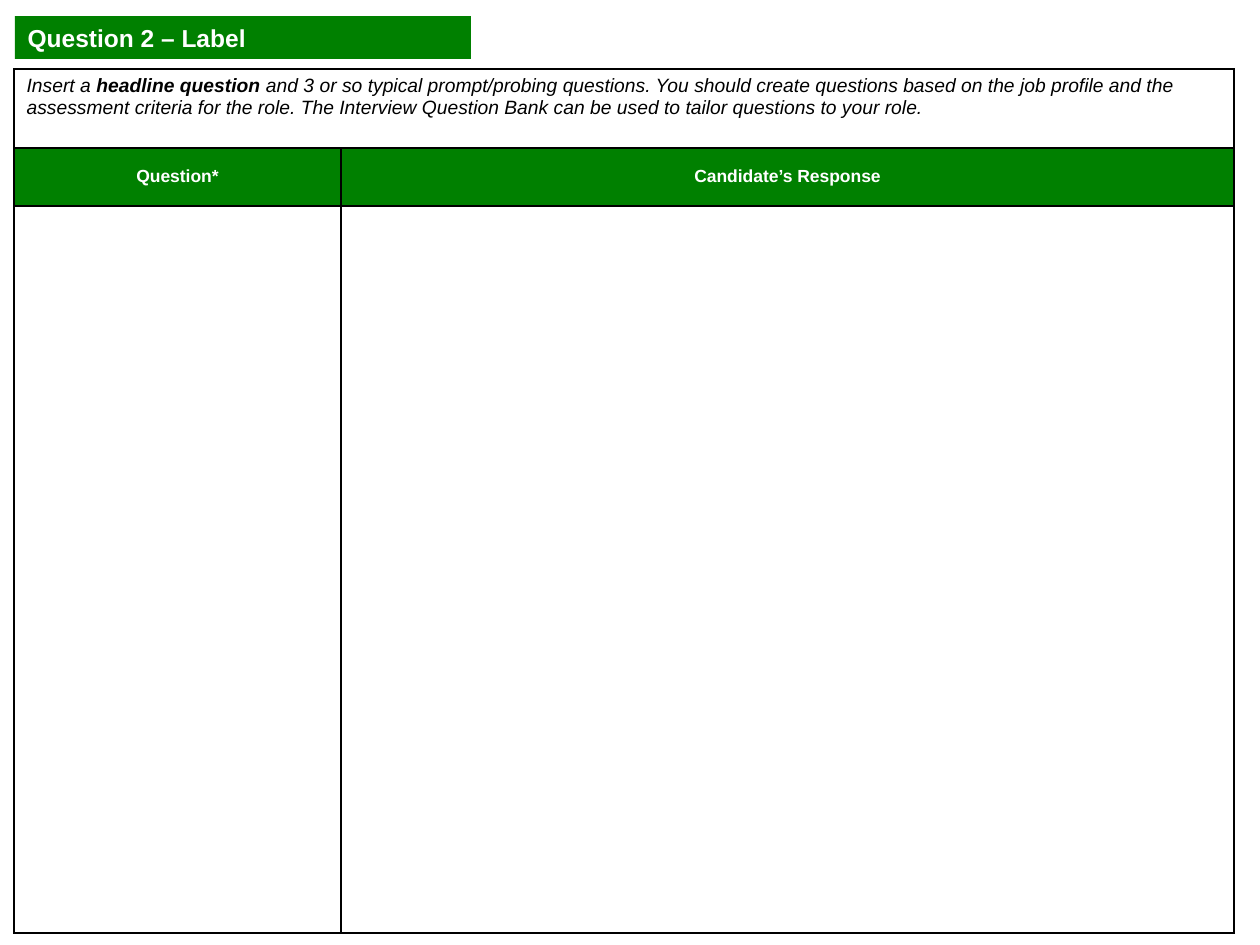
from lxml.etree import SubElement
from pptx import Presentation
from pptx.dml.color import RGBColor
from pptx.enum.text import MSO_ANCHOR as ANCHOR, MSO_AUTO_SIZE as AUTO, PP_ALIGN as ALIGN
from pptx.oxml.ns import qn
from pptx.util import Inches, Pt

PX = Inches(1) // 126
COLORS = {"green": "008000", "white": "FFFFFF", "black": "000000"}
BORDER_PT = 1

TITLE_BOX = (15, 16, 456, 43)
TABLE_BOX = (14, 69, 1220, 864)
QUESTION_WIDTH = 327
GUIDE_HEIGHT, HEADER_HEIGHT = 79, 58

HEADERS = ["Question*", "Candidate’s Response"]
GUIDE = [
    ("Insert a ", False),
    ("headline question", True),
    (" and 3 or so typical prompt/probing questions. You should create questions "
     "based on the job profile and the assessment criteria for the role. The Interview "
     "Question Bank can be used to tailor questions to your role.", False),
]


def rgb(name):
    return RGBColor.from_string(COLORS[name])


def add_run(p, text, color, **formats):
    r = p.add_run()
    r.text = text
    r.font.color.rgb = rgb(color)
    for key, value in {"name": "Arial", **formats}.items():
        setattr(r.font, key, value)


def fill_solid(target, color):
    target.fill.solid()
    target.fill.fore_color.rgb = rgb(color)


def add_borders(cell):
    tc_pr = cell._tc.get_or_add_tcPr()
    for side in ("lnL", "lnR", "lnT", "lnB"):
        ln = SubElement(tc_pr, qn(f"a:{side}"), w=str(Pt(BORDER_PT)))
        fill = SubElement(ln, qn("a:solidFill"))
        SubElement(fill, qn("a:srgbClr"), val=COLORS["black"])


def add_title(slide, box, text):
    sp = slide.shapes.title
    sp.left, sp.top, sp.width, sp.height = (v * PX for v in box)
    fill_solid(sp, "green")
    tf = sp.text_frame
    tf.auto_size, tf.vertical_anchor = AUTO.NONE, ANCHOR.MIDDLE
    p = tf.paragraphs[0]
    p.alignment = ALIGN.LEFT
    add_run(p, text, "white", size=Pt(14), bold=True)


def add_question_table(slide, box):
    left, top, width, height = box
    table = slide.shapes.add_table(3, 2, *(v * PX for v in box)).table
    table.first_row = table.horz_banding = False
    for col, w in zip(table.columns, (QUESTION_WIDTH, width - QUESTION_WIDTH)):
        col.width = w * PX
    answer_height = height - GUIDE_HEIGHT - HEADER_HEIGHT
    for row, h in zip(table.rows, (GUIDE_HEIGHT, HEADER_HEIGHT, answer_height)):
        row.height = h * PX
    for cell in table.iter_cells():
        add_borders(cell)
        cell.fill.background()

    # Guidance across both columns
    guide = table.cell(0, 0)
    guide.merge(table.cell(0, 1))
    guide.vertical_anchor = ANCHOR.TOP
    for text, bold in GUIDE:
        add_run(guide.text_frame.paragraphs[0], text, "black",
                size=Pt(11), bold=bold, italic=True)

    # Column headers
    for i, text in enumerate(HEADERS):
        cell = table.cell(1, i)
        fill_solid(cell, "green")
        cell.vertical_anchor = ANCHOR.MIDDLE
        p = cell.text_frame.paragraphs[0]
        p.alignment = ALIGN.CENTER
        add_run(p, text, "white", size=Pt(10), bold=True)


def main():
    prs = Presentation()
    prs.slide_width, prs.slide_height = Inches(10), Inches(7.5)
    slide = prs.slides.add_slide(prs.slide_layouts[5])
    add_title(slide, TITLE_BOX, "Question 2 – Label")
    add_question_table(slide, TABLE_BOX)
    prs.save("out.pptx")


if __name__ == "__main__":
    main()
